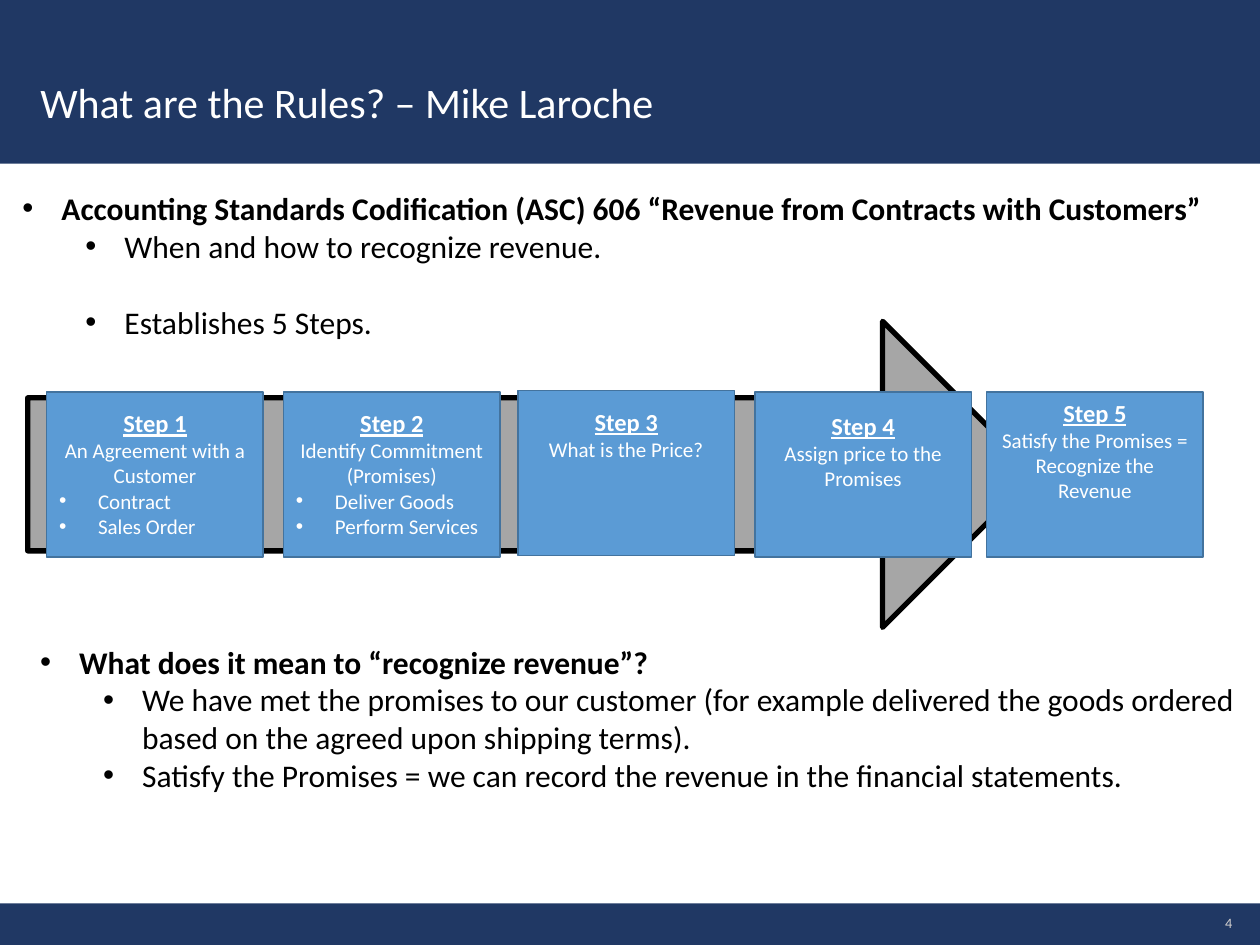
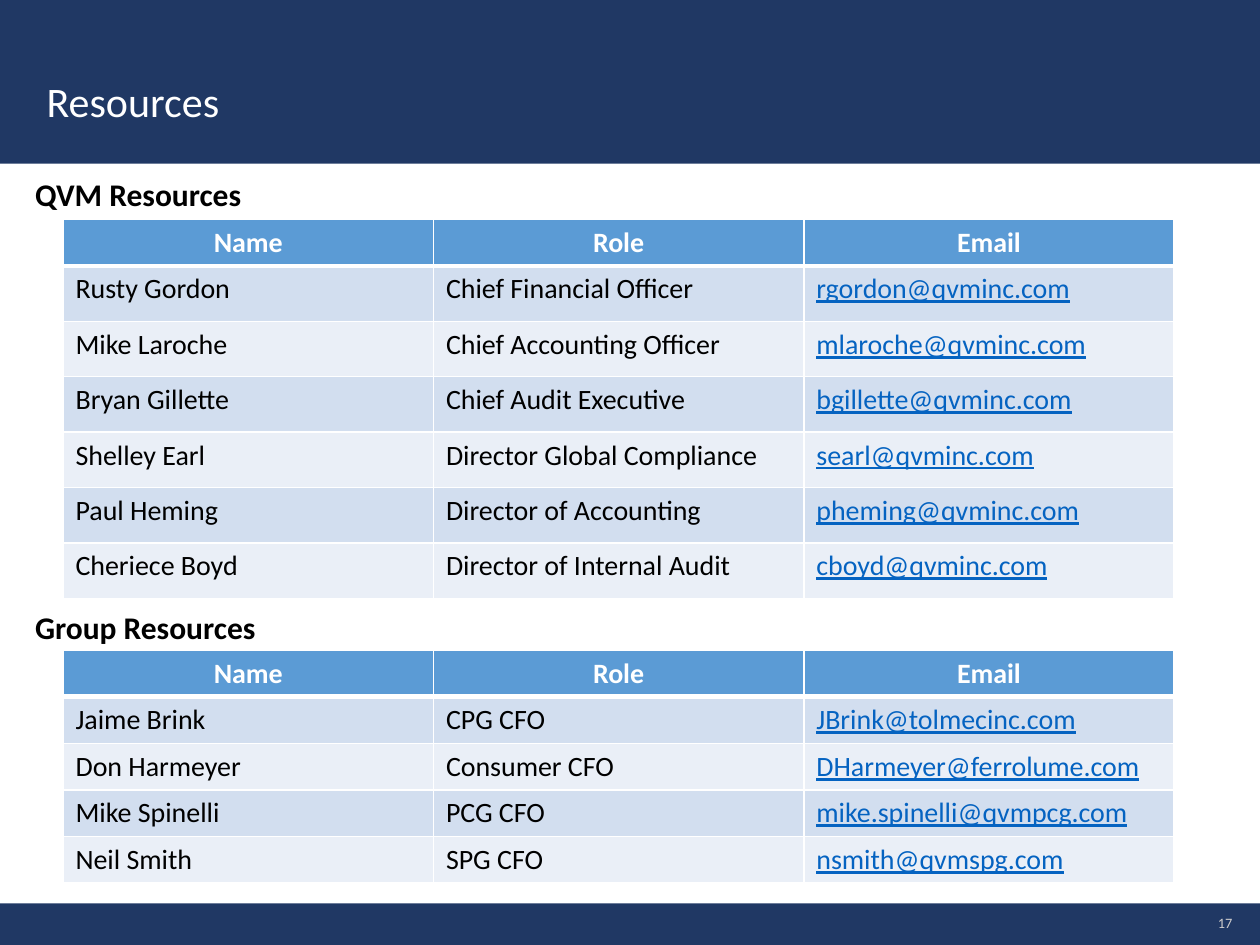
from dataclasses import dataclass

from lxml import etree
from pptx import Presentation
from pptx.dml.color import RGBColor
from pptx.enum.shapes import MSO_SHAPE
from pptx.enum.text import MSO_ANCHOR, MSO_AUTO_SIZE, PP_ALIGN
from pptx.oxml.ns import qn
from pptx.util import Inches, Pt

RECTANGLE, RIGHT_ARROW = MSO_SHAPE.RECTANGLE, MSO_SHAPE.RIGHT_ARROW
LEFT, CENTER, RIGHT = PP_ALIGN.LEFT, PP_ALIGN.CENTER, PP_ALIGN.RIGHT
TOP, MIDDLE = MSO_ANCHOR.TOP, MSO_ANCHOR.MIDDLE
NO_AUTOFIT = MSO_AUTO_SIZE.NONE

FONT = "Calibri"
COLORS = {
    "navy": "203864", "page_number": "D0CECE", "white": "FFFFFF",
    "black": "000000", "arrow": "A6A6A6", "blue": "5B9BD5",
    "step_line": "43739E", "row_dark": "D2DEEF", "row_light": "EAEFF7",
    "link": "0563C1",
}
SLIDE_WIDTH, SLIDE_HEIGHT = 10, 7.5
BULLET_HANG = 0.31


@dataclass
class Line:
    """One paragraph with a single text style."""
    text: str
    size: float = 18
    color: str = "black"
    bold: bool = False
    underline: bool = False
    align: PP_ALIGN = LEFT
    bullet_indent: float = 0
    level: int = 0
    space_before: float = 0


@dataclass
class Step:
    left: float
    top: float
    text_offset: float
    heading: str
    description: str
    examples: tuple[str, ...] = ()


@dataclass
class ContactTable:
    heading: str
    heading_top: float
    top: float
    row_height: float
    contacts: list[tuple[str, str, str]]


STEPS = [
    Step(0.37, 3.11, 0.13, "Step 1", "An Agreement with a Customer",
         ("Contract", "Sales Order")),
    Step(2.25, 3.11, 0.13, "Step 2", "Identify Commitment (Promises)",
         ("Deliver Goods", "Perform Services")),
    Step(4.11, 3.1, 0.13, "Step 3", "What is the Price?"),
    Step(5.99, 3.11, 0.15, "Step 4", "Assign price to the Promises"),
    Step(7.83, 3.11, 0.05, "Step 5",
         "Satisfy the Promises = Recognize the Revenue"),
]

CONTACT_TABLES = [
    ContactTable("QVM Resources", 1.34, 1.74, 0.44, [
        ("Rusty Gordon", "Chief Financial Officer", "rgordon@qvminc.com"),
        ("Mike Laroche", "Chief Accounting Officer", "mlaroche@qvminc.com"),
        ("Bryan Gillette", "Chief Audit Executive", "bgillette@qvminc.com"),
        ("Shelley Earl", "Director Global Compliance", "searl@qvminc.com"),
        ("Paul Heming", "Director of Accounting", "pheming@qvminc.com"),
        ("Cheriece Boyd", "Director of Internal Audit", "cboyd@qvminc.com"),
    ]),
    ContactTable("Group Resources", 4.78, 5.16, 0.37, [
        ("Jaime Brink", "CPG CFO", "JBrink@tolmecinc.com"),
        ("Don Harmeyer", "Consumer CFO", "DHarmeyer@ferrolume.com"),
        ("Mike Spinelli", "PCG CFO", "mike.spinelli@qvmpcg.com"),
        ("Neil Smith", "SPG CFO", "nsmith@qvmspg.com"),
    ]),
]


# Text helpers
def rgb(name: str) -> RGBColor:
    return RGBColor.from_string(COLORS[name])


def add_bullet(paragraph, indent: float) -> None:
    properties = paragraph._p.get_or_add_pPr()
    properties.set("marL", str(Inches(indent)))
    properties.set("indent", str(-Inches(BULLET_HANG)))
    etree.SubElement(properties, qn("a:buFont")).set("typeface", "Arial")
    etree.SubElement(properties, qn("a:buChar")).set("char", "•")


def write_lines(text_frame, lines: list[Line]) -> None:
    for index, line in enumerate(lines):
        paragraph = (text_frame.add_paragraph() if index
                     else text_frame.paragraphs[0])
        if line.bullet_indent:
            add_bullet(paragraph, line.bullet_indent)
        paragraph.level = line.level
        paragraph.alignment = line.align
        if line.space_before:
            paragraph.space_before = Pt(line.space_before)
        run = paragraph.add_run()
        run.text = line.text
        run.font.name = FONT
        run.font.size = Pt(line.size)
        run.font.bold = line.bold
        run.font.underline = line.underline
        run.font.color.rgb = rgb(line.color)


def add_text(slide, left: float, top: float, width: float, height: float,
             lines: list[Line]):
    box = slide.shapes.add_textbox(Inches(left), Inches(top),
                                   Inches(width), Inches(height))
    box.text_frame.word_wrap = True
    write_lines(box.text_frame, lines)
    return box


# Shape helpers
def add_shape(slide, preset: MSO_SHAPE, left: float, top: float, width: float,
              height: float, fill: str, line: str = "", line_width: float = 1):
    shape = slide.shapes.add_shape(preset, Inches(left), Inches(top),
                                   Inches(width), Inches(height))
    shape.shadow.inherit = False
    shape.fill.solid()
    shape.fill.fore_color.rgb = rgb(fill)
    if line:
        shape.line.color.rgb = rgb(line)
        shape.line.width = Pt(line_width)
    else:
        shape.line.fill.background()
    return shape


# Shared slide frame: bands, page number and title
def add_framed_slide(presentation, title_text: str, title_left: float,
                     title_top: float, page_number: str):
    slide = presentation.slides.add_slide(presentation.slide_layouts[5])
    add_shape(slide, RECTANGLE, 0, 7.17, SLIDE_WIDTH, 0.33, "navy")
    header = add_shape(slide, RECTANGLE, 0, 0, SLIDE_WIDTH, 1.3, "navy")

    number = add_text(slide, 9.49, 7.2, 0.29, 0.24,
                      [Line(page_number, 8.2, "page_number", align=RIGHT)])
    frame = number.text_frame
    frame.vertical_anchor = MIDDLE
    frame.margin_left = frame.margin_right = 0
    frame.margin_top = frame.margin_bottom = 0

    title = slide.shapes.title
    header._element.addnext(title._element)
    title.left, title.top = Inches(title_left), Inches(title_top)
    title.width, title.height = Inches(8.61), Inches(1.07)
    title.text_frame.auto_size = NO_AUTOFIT
    title.text_frame.vertical_anchor = MIDDLE
    write_lines(title.text_frame, [Line(title_text, 24, "white")])
    title.text_frame.paragraphs[0].line_spacing = 0.9
    return slide


# Rules slide
def add_step(slide, step: Step) -> None:
    box = add_shape(slide, RECTANGLE, step.left, step.top, 1.72, 1.31,
                    "blue", "step_line")
    frame = box.text_frame
    frame.word_wrap = True
    frame.vertical_anchor = TOP
    frame.margin_top = Inches(step.text_offset)
    write_lines(frame, [
        Line(step.heading, 14, "white", bold=True, underline=True,
             align=CENTER),
        Line(step.description, 12, "white", align=CENTER),
        *(Line(example, 12, "white", bullet_indent=BULLET_HANG)
          for example in step.examples),
    ])


def main_point(text: str) -> Line:
    return Line(text, bold=True, bullet_indent=BULLET_HANG)


def sub_point(text: str, space_before: float = 0) -> Line:
    return Line(text, bullet_indent=0.81, level=1, space_before=space_before)


def build_rules_slide(presentation) -> None:
    slide = add_framed_slide(presentation, "What are the Rules? – Mike Laroche",
                             0.22, 0.3, "4")
    add_shape(slide, RIGHT_ARROW, 0.22, 2.55, 8, 2.43, "arrow", "black", 3)
    add_text(slide, 0.08, 1.45, 9.7, 1.31, [
        main_point("Accounting Standards Codification (ASC) 606 "
                   "“Revenue from Contracts with Customers”"),
        sub_point("When and how to recognize revenue."),
        sub_point("Establishes 5 Steps.", space_before=22),
    ])
    for step in STEPS:
        add_step(slide, step)
    add_text(slide, 0.22, 5.05, 9.7, 1.31, [
        main_point("What does it mean to “recognize revenue”?"),
        sub_point("We have met the promises to our customer (for example "
                  "delivered the goods ordered based on the agreed upon "
                  "shipping terms)."),
        sub_point("Satisfy the Promises = we can record the revenue in the "
                  "financial statements."),
    ])


# Resources slide
def style_cell(cell, fill: str, top_width: float, bottom_width: float) -> None:
    properties = cell._tc.get_or_add_tcPr()
    widths = {"lnL": 1, "lnR": 1, "lnT": top_width, "lnB": bottom_width}
    for side, width in widths.items():
        border = etree.SubElement(properties, qn(f"a:{side}"))
        border.set("w", str(Pt(width)))
        solid = etree.SubElement(border, qn("a:solidFill"))
        etree.SubElement(solid, qn("a:srgbClr")).set("val", COLORS["white"])
    cell.fill.solid()
    cell.fill.fore_color.rgb = rgb(fill)


def add_contact_table(slide, group: ContactTable) -> None:
    rows = [("Name", "Role", "Email"), *group.contacts]
    header_height, column_width = 0.37, 2.94
    height = header_height + group.row_height * len(group.contacts)
    table = slide.shapes.add_table(
        len(rows), 3, Inches(0.5), Inches(group.top),
        Inches(3 * column_width), Inches(height)).table
    for column in table.columns:
        column.width = Inches(column_width)
    for row_index, values in enumerate(rows):
        is_header = row_index == 0
        table.rows[row_index].height = Inches(
            header_height if is_header else group.row_height)
        band = "row_dark" if row_index % 2 else "row_light"
        for column_index, value in enumerate(values):
            cell = table.cell(row_index, column_index)
            style_cell(cell, "blue" if is_header else band,
                       3 if row_index == 1 else 1, 3 if is_header else 1)
            if is_header:
                line = Line(value, 16, "white", bold=True, align=CENTER)
            elif column_index == 2:
                line = Line(value, 16, "link", underline=True)
            else:
                line = Line(value, 16)
            write_lines(cell.text_frame, [line])


def build_resources_slide(presentation) -> None:
    slide = add_framed_slide(presentation, "Resources", 0.27, 0.29, "17")
    for group in CONTACT_TABLES:
        add_contact_table(slide, group)
        add_text(slide, 0.18, group.heading_top, 9.46, 0.4,
                 [Line(group.heading, bold=True)])


def main() -> None:
    presentation = Presentation()
    presentation.slide_width = Inches(SLIDE_WIDTH)
    presentation.slide_height = Inches(SLIDE_HEIGHT)
    build_rules_slide(presentation)
    build_resources_slide(presentation)
    presentation.save("out.pptx")


if __name__ == "__main__":
    main()
